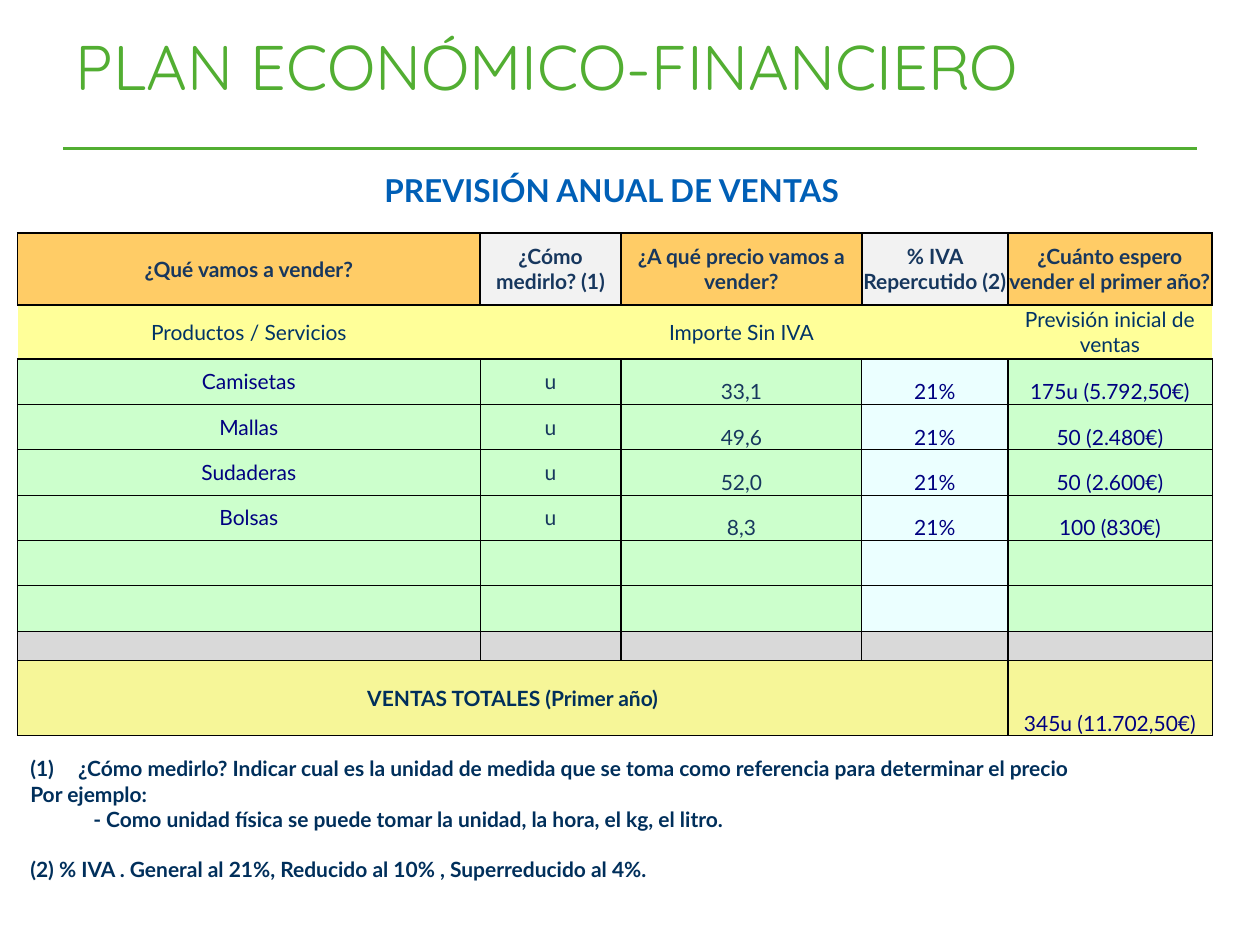
"""Build the annual sales forecast slide of an economic and financial plan."""
from lxml.etree import SubElement
from pptx import Presentation
from pptx.dml.color import RGBColor
from pptx.enum.text import MSO_ANCHOR as Anchor, MSO_AUTO_SIZE as AutoSize, PP_ALIGN as Align
from pptx.oxml.ns import qn
from pptx.util import Inches, Pt

COLORS = {
    "green": "52AE32", "blue": "005FB6", "navy": "000080", "slate": "17375E",
    "deep": "002F5B", "teal": "003366", "black": "000000", "orange": "FFCC66",
    "light": "F2F2F2", "yellow": "FFFF99", "mint": "CCFFCC", "ice": "EBFFFF",
    "gray": "D9D9D9", "straw": "F6F698",
}
COLUMN_WIDTHS = [3.67, 1.12, 1.91, 1.16, 1.62]
ROW_HEIGHTS = [0.57, 0.43] + [0.36] * 6 + [0.23, 0.6]
COLUMN_EDGES = [1, 0.5, 1, 0.5, 1, 0.5]
ROW_EDGES = [1, 1, 1] + [0.5] * 8

HEADERS = ["¿Qué vamos a vender?", "¿Cómo medirlo? (1)", "¿A qué precio vamos a vender?",
           "% IVA Repercutido (2)", "¿Cuánto espero vender el primer año?"]
SUBHEADERS = ["Productos / Servicios", "", "Importe Sin IVA", "", "Previsión inicial de ventas"]
PRODUCTS = [
    ["Camisetas", "u", "33,1", "21%", "175u (5.792,50€)"],
    ["Mallas", "u", "49,6", "21%", "50 (2.480€)"],
    ["Sudaderas", "u", "52,0", "21%", "50 (2.600€)"],
    ["Bolsas", "u", "8,3", "21%", "100 (830€)"],
]
EMPTY = [""] * 5
TOTALS = ["VENTAS TOTALES (Primer año)", "", "", "", "345u (11.702,50€)"]
ROWS = [HEADERS, SUBHEADERS, *PRODUCTS, EMPTY, EMPTY, EMPTY, TOTALS]

HEADER_FILLS = ["orange", "light", "orange", "light", "orange"]
PRODUCT_FILLS = ["mint", "mint", "mint", "ice", "mint"]
ROW_FILLS = [HEADER_FILLS, ["yellow"] * 5, *[PRODUCT_FILLS] * 6, ["gray"] * 5, ["straw"] * 5]
PRODUCT_INKS = ["navy", "slate", "slate", "navy", "navy"]
ROW_INKS = [["slate"] * 5, ["teal"] * 5, *[PRODUCT_INKS] * 7, ["deep"] * 4 + ["navy"]]

NOTES = [
    ("¿Cómo medirlo? Indicar cual es la unidad de medida que se toma como referencia "
     "para determinar el precio", {"indent": 0.38, "numbered": True}),
    ("Por ejemplo:", {}),
    ("- Como unidad física se puede tomar la unidad, la hora, el kg, el litro.",
     {"indent": 0.5, "level": 1}),
    ("(2) % IVA . General al 21%, Reducido al 10% , Superreducido al 4%.", {"before": 14.4}),
]


def color(name):
    return RGBColor.from_string(COLORS[name])


def write(paragraph, text, size=12, ink="deep", font="Lato", bold=False, align=Align.CENTER):
    """Put formatted text in a paragraph."""
    paragraph.alignment = align
    if not text:
        paragraph._p.get_or_add_endParaRPr().set("sz", str(size * 100))
        return
    run = paragraph.add_run()
    run.text = text
    run.font.size, run.font.name, run.font.bold = Pt(size), font, bold
    run.font.color.rgb = color(ink)


class SlideBuilder:
    """Hold the style and the current slide."""

    def __init__(self, presentation):
        self.slide = presentation.slides.add_slide(presentation.slide_layouts[1])

    def place(self, shape, left, top, width, height):
        shape.left, shape.top = Inches(left), Inches(top)
        shape.width, shape.height = Inches(width), Inches(height)

    def title(self, text, *box):
        shape = self.slide.shapes.title
        self.place(shape, *box)
        frame = shape.text_frame
        frame.auto_size, frame.vertical_anchor = AutoSize.NONE, Anchor.MIDDLE
        paragraph = frame.paragraphs[0]
        paragraph.line_spacing = Pt(44)
        write(paragraph, text, size=36, ink="green", font="Quicksand", align=Align.LEFT)

    def rule(self, left, right, top):
        line = self.slide.shapes.add_connector(
            1, Inches(left), Inches(top), Inches(right), Inches(top))
        line.line.color.rgb, line.line.width = color("green"), Pt(2)
        SubElement(line._element.spPr, qn("a:effectLst"))

    def heading(self, text, *box):
        shape = self.slide.shapes.add_textbox(*map(Inches, box))
        shape.text_frame.word_wrap = True
        write(shape.text_frame.paragraphs[0], text, size=18, ink="blue", bold=True)

    def border(self, cell, sides):
        properties = cell._tc.get_or_add_tcPr()
        for side, width in zip("LRTB", sides):
            line = SubElement(properties, qn(f"a:ln{side}"), w=str(Pt(width)))
            if width:
                fill = SubElement(line, qn("a:solidFill"))
                SubElement(fill, qn("a:srgbClr"), val=COLORS["black"])
            else:
                SubElement(line, qn("a:noFill"))

    def cell_sides(self, row, column, span):
        if row == 0:
            return [1] * 4
        across = [0, 0] if row == 1 else [COLUMN_EDGES[column], COLUMN_EDGES[column + span]]
        return across + ROW_EDGES[row:row + 2]

    def table(self, left, top):
        size = sum(COLUMN_WIDTHS), sum(ROW_HEIGHTS)
        table = self.slide.shapes.add_table(
            len(ROWS), len(COLUMN_WIDTHS), *map(Inches, (left, top, *size))).table
        for column, width in zip(table.columns, COLUMN_WIDTHS):
            column.width = Inches(width)
        for row, height in zip(table.rows, ROW_HEIGHTS):
            row.height = Inches(height)
        last = len(ROWS) - 1
        table.cell(last, 0).merge(table.cell(last, 3))
        for row, texts in enumerate(ROWS):
            for column, text in enumerate(texts):
                cell = table.cell(row, column)
                if cell.is_spanned:
                    continue
                cell.margin_left = cell.margin_right = cell.margin_top = cell.margin_bottom = 0
                low = row > 1 and column > 1
                cell.vertical_anchor = Anchor.BOTTOM if low else Anchor.MIDDLE
                self.border(cell, self.cell_sides(row, column, cell.span_width))
                cell.fill.solid()
                cell.fill.fore_color.rgb = color(ROW_FILLS[row][column])
                bold = row == 0 or (row == last and column == 0)
                write(cell.text_frame.paragraphs[0], text, ink=ROW_INKS[row][column], bold=bold)

    def notes(self, items, *box):
        shape = self.slide.placeholders[1]
        self.place(shape, *box)
        frame = shape.text_frame
        frame.auto_size, frame.vertical_anchor = AutoSize.NONE, Anchor.TOP
        for index, (text, options) in enumerate(items):
            paragraph = frame.add_paragraph() if index else frame.paragraphs[0]
            self.note(paragraph, text, **options)

    def note(self, paragraph, text, indent=0, level=0, before=0, numbered=False):
        paragraph.level, paragraph.space_before = level, Pt(before)
        write(paragraph, text, bold=True, align=Align.JUSTIFY)
        properties = paragraph._p.get_or_add_pPr()
        properties.set("marL", str(Inches(indent)))
        properties.set("indent", str(Inches(-indent if numbered else 0)))
        if numbered:
            SubElement(properties, qn("a:buFont"), typeface="+mj-lt")
            SubElement(properties, qn("a:buAutoNum"), type="arabicParenBoth")
        else:
            SubElement(properties, qn("a:buNone"))


def main():
    presentation = Presentation()
    presentation.slide_width, presentation.slide_height = Inches(10), Inches(7.5)
    builder = SlideBuilder(presentation)
    builder.title("PLAN ECONÓMICO-FINANCIERO", 0.5, 0.13, 9.12, 0.77)
    builder.rule(0.5, 9.5, 1.18)
    builder.table(0.14, 1.85)
    builder.heading("PREVISIÓN ANUAL DE VENTAS", 2.66, 1.31, 4.39, 0.4)
    builder.notes(NOTES, 0.14, 5.95, 9.48, 1.11)
    presentation.save("out.pptx")


if __name__ == "__main__":
    main()
